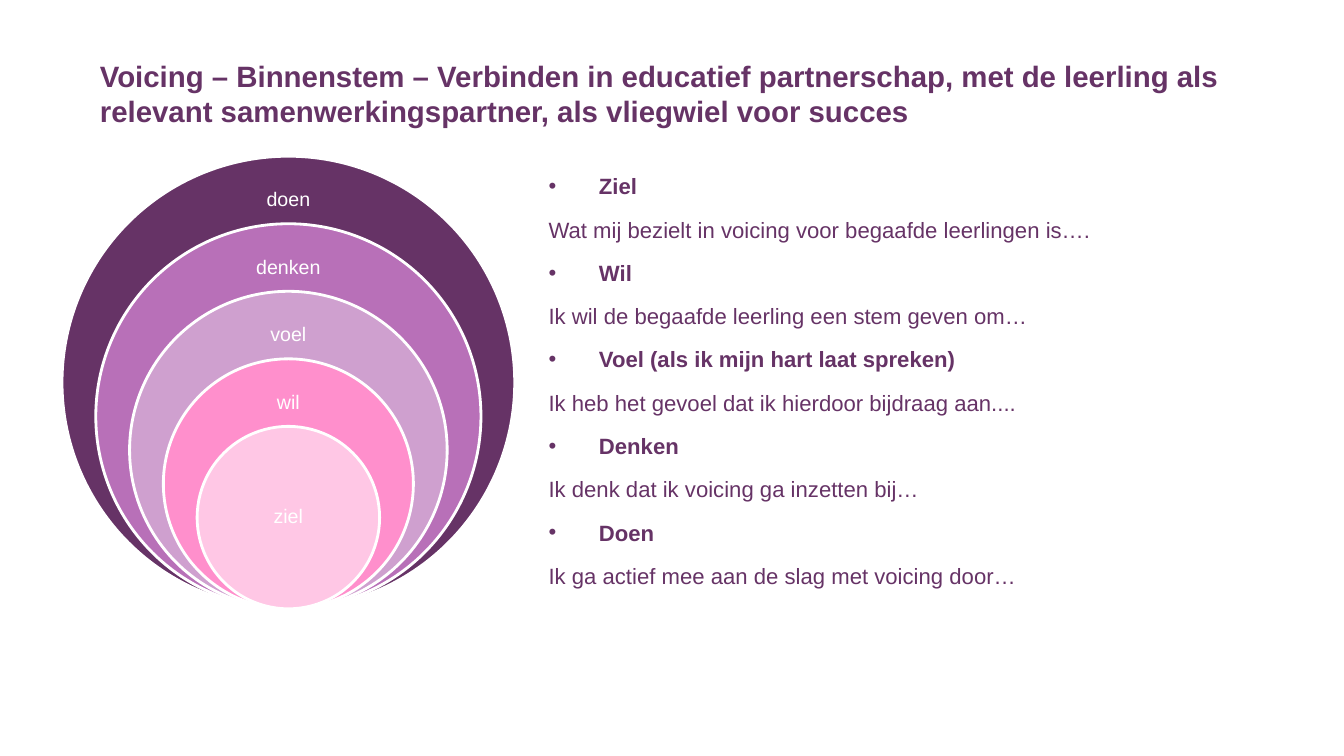
from pptx import Presentation, util as u
from pptx.dml.color import RGBColor
from pptx.enum import shapes, text
from pptx.oxml.ns import qn
from lxml import etree

HEAD = ("Voicing – Binnenstem – Verbinden in educatief partnerschap, "
        "met de leerling als relevant samenwerkingspartner, als vliegwiel voor succes")
STEPS = [
    ("Ziel", "Wat mij bezielt in voicing voor begaafde leerlingen is…."),
    ("Wil", "Ik wil de begaafde leerling een stem geven om…"),
    ("Voel (als ik mijn hart laat spreken)", "Ik heb het gevoel dat ik hierdoor bijdraag aan...."),
    ("Denken", "Ik denk dat ik voicing ga inzetten bij…"),
    ("Doen", "Ik ga actief mee aan de slag met voicing door…"),
]
RINGS = ["doen", "denken", "voel", "wil", "ziel"]
COLORS = {"text": "663366", "white": "FFFFFF", "doen": "663366", "denken": "B870B8",
          "voel": "CFA0CF", "wil": "FF8FCC", "ziel": "FFC7E5"}
MID, BASE, OUTER, STEP = 2.86, 6.04, 4.49, 0.67


def color(key):
    return RGBColor.from_string(COLORS[key])


def place(shape, *box):
    shape.left, shape.top, shape.width, shape.height = map(u.Inches, box)


def style(para, size, key, bold=False):
    font = para.font
    font.name, font.size, font.bold = "Arial", u.Pt(size), bold
    font.color.rgb = color(key)


def bullet(para, char=None):
    props = para._p.get_or_add_pPr()
    indent = u.Inches(0.5) if char else 0
    props.set("marL", str(indent))
    props.set("indent", str(-indent))
    mark = etree.SubElement(props, qn("a:buChar" if char else "a:buNone"))
    if char:
        mark.set("char", char)


def add_head(slide):
    title = slide.shapes.title
    place(title, 0.89, 0.3, 11.56, 1.25)
    frame = title.text_frame
    frame.text = HEAD
    frame.auto_size = text.MSO_AUTO_SIZE.NONE
    frame.vertical_anchor = text.MSO_ANCHOR.MIDDLE
    para = frame.paragraphs[0]
    para.alignment = text.PP_ALIGN.LEFT
    style(para, 21, "text", True)


def add_body(slide):
    body = slide.placeholders[1]
    place(body, 5.34, 1.56, 7.1, 5.35)
    frame = body.text_frame
    frame.auto_size = text.MSO_AUTO_SIZE.NONE
    lines = [line for pair in STEPS for line in pair]
    frame.text = "\n".join(lines)
    for i, para in enumerate(frame.paragraphs):
        name = i % 2 == 0
        para.line_spacing = 1.4
        para.space_before = u.Pt(4.4 if i else 0)
        bullet(para, "•" if name else None)
        style(para, 15.8, "text", name)


def add_ring(slide, i, name):
    size = OUTER - i * STEP
    top = BASE - size
    ring = slide.shapes.add_shape(shapes.MSO_SHAPE.OVAL, 0, 0, 0, 0)
    place(ring, MID - size / 2, top, size, size)
    ring.shadow.inherit = False
    ring.fill.solid()
    ring.fill.fore_color.rgb = color(name)
    ring.line.color.rgb = color("white")
    ring.line.width = u.Pt(2)

    inner = name == RINGS[-1]
    wide, high = (1.27, 0.9) if inner else (1.65, 0.44)
    drop = (size - high) / 2 if inner else 0.22
    label = slide.shapes.add_textbox(0, 0, 0, 0)
    place(label, MID - wide / 2, top + drop, wide, high)
    frame = label.text_frame
    frame.word_wrap = True
    frame.vertical_anchor = text.MSO_ANCHOR.MIDDLE
    frame.margin_left = frame.margin_right = u.Inches(0.11)
    frame.margin_top = frame.margin_bottom = u.Inches(0.11)
    frame.text = name
    para = frame.paragraphs[0]
    para.alignment = text.PP_ALIGN.CENTER
    para.line_spacing = 0.9
    style(para, 14, "white")


def main():
    deck = Presentation()
    deck.slide_width, deck.slide_height = u.Inches(13.33), u.Inches(7.5)
    slide = deck.slides.add_slide(deck.slide_layouts[1])
    add_head(slide)
    add_body(slide)
    for i, name in enumerate(RINGS):
        add_ring(slide, i, name)
    deck.save("out.pptx")


if __name__ == "__main__":
    main()
